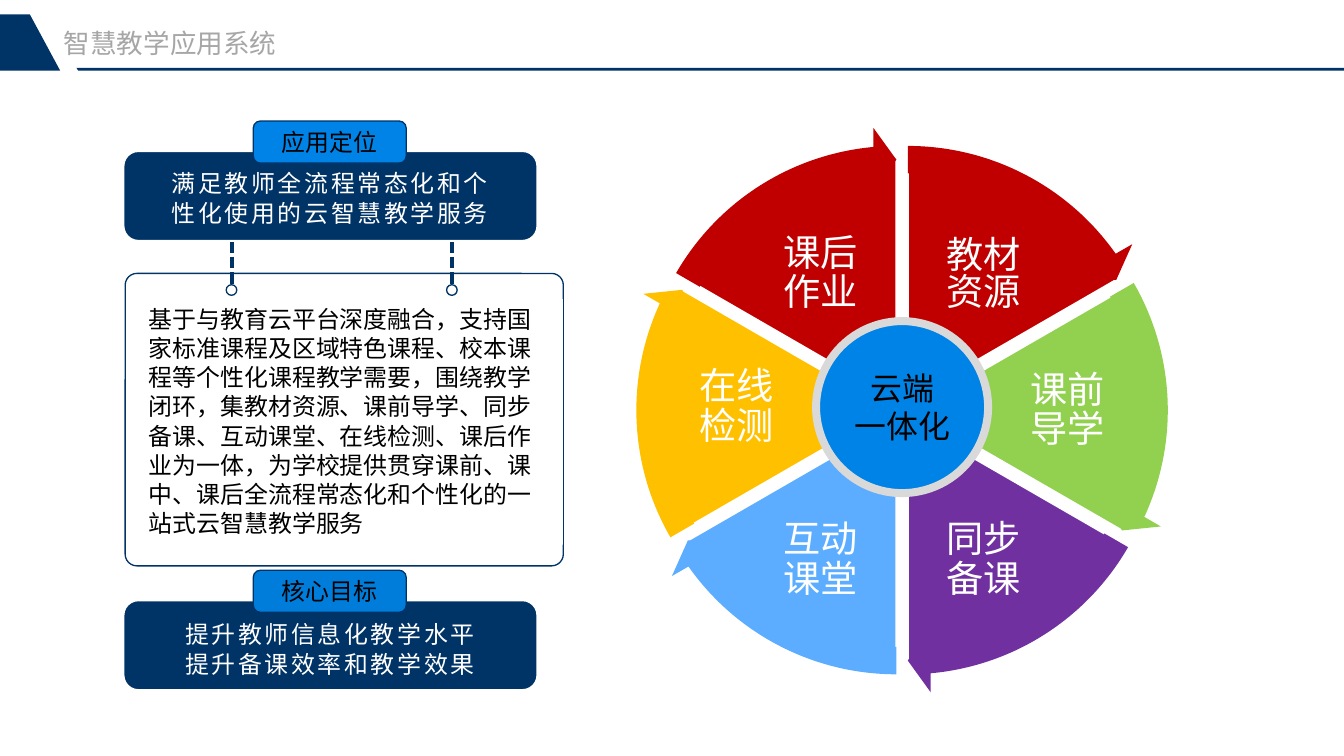
import math

from lxml import etree
from pptx import Presentation
from pptx import util as u
from pptx.dml.color import RGBColor
from pptx.enum import dml, shapes, text
from pptx.oxml import ns

COLORS = {
    "navy": "003366", "white": "FFFFFF", "black": "000000", "title": "A6A6A6",
    "blue": "0083E6", "deep blue": "007DDA", "ring": "D9D9D9", "red": "C00000",
    "green": "92D050", "purple": "7030A0", "sky": "5CADFF", "yellow": "FFC000",
}
CJK_FONT = "Noto Sans CJK SC"
WIDTH, HEIGHT = 1012.32, 569.52
CENTER, TOP, MIDDLE, BOTTOM = (
    text.PP_ALIGN.CENTER, text.MSO_ANCHOR.TOP, text.MSO_ANCHOR.MIDDLE, text.MSO_ANCHOR.BOTTOM)


def style(shape, fill, line=None, width=1):
    shape.shadow.inherit = False
    shape.fill.solid()
    shape.fill.fore_color.rgb = RGBColor.from_string(COLORS[fill])
    if line:
        shape.line.color.rgb = RGBColor.from_string(COLORS[line])
        shape.line.width = u.Pt(width)
    else:
        shape.line.fill.background()
    return shape


def write(shape, lines, size, color, font=CJK_FONT, spacing=0, anchor=MIDDLE,
          margins=(7.2, 3.6), **paragraph_format):
    across, down = (u.Pt(margin) for margin in margins)
    frame_format = {
        "word_wrap": True, "auto_size": text.MSO_AUTO_SIZE.NONE, "vertical_anchor": anchor,
        "margin_left": across, "margin_right": across, "margin_top": down, "margin_bottom": down,
    }
    for name, value in frame_format.items():
        setattr(shape.text_frame, name, value)
    shape.text_frame.text = "\n".join(lines)
    for paragraph in shape.text_frame.paragraphs:
        for name, value in paragraph_format.items():
            setattr(paragraph, name, value)
        for run in paragraph.runs:
            run.font.name, run.font.size = font, u.Pt(size)
            run.font.color.rgb = RGBColor.from_string(COLORS[color])
            properties = run.font._element
            etree.SubElement(properties, ns.qn("a:ea")).set("typeface", CJK_FONT)
            if spacing:
                properties.set("spc", str(spacing * 100))


presentation = Presentation()
presentation.slide_width, presentation.slide_height = u.Pt(WIDTH), u.Pt(HEIGHT)
slide = presentation.slides.add_slide(presentation.slide_layouts[5])
add_shape, add_textbox = slide.shapes.add_shape, slide.shapes.add_textbox
SHAPE = shapes.MSO_SHAPE

# Header band and title
header_outlines = [
    [(57.6, 51.1), (WIDTH, 51.1), (WIDTH, 53.3), (59, 53.3)],
    [(22.5, 10.8), (45.4, 53.3), (0, 53.3), (0, 10.8)],
]
for outline in header_outlines:
    points = [(u.Pt(x), u.Pt(y)) for x, y in outline]
    builder = slide.shapes.build_freeform(*points[0])
    builder.add_line_segments(points[1:])
    style(builder.convert_to_shape(), "navy")

title = slide.shapes.title
title_box = {"left": 48, "top": 20, "width": 241, "height": 24.5}
for name, value in title_box.items():
    setattr(title, name, u.Pt(value))
write(title, ["智慧教学应用系统"], 20, "title", font="Arial", anchor=TOP, margins=(0, 0),
      alignment=text.PP_ALIGN.LEFT, space_before=u.Pt(0))

# Description panel
panel = style(add_shape(SHAPE.ROUNDED_RECTANGLE, u.Pt(94.3), u.Pt(206), u.Pt(330), u.Pt(220.3)),
              "white", "navy")
panel.adjustments[0] = 0.04
description = style(add_shape(SHAPE.RECTANGLE, u.Pt(105), u.Pt(225.4), u.Pt(319), u.Pt(185)), "white")
write(description, [
    "基于与教育云平台深度融合，支持国家标准课程及区域特色课程、校本课程等个性化课程教学需要，"
    "围绕教学闭环，集教材资源、课前导学、同步备课、互动课堂、在线检测、课后作业为一体，"
    "为学校提供贯穿课前、课中、课后全流程常态化和个性化的一站式云智慧教学服务"],
    18, "black", anchor=TOP, alignment=text.PP_ALIGN.LEFT, line_spacing=u.Pt(22))

# Dashed hangers with rings
for x in (174.4, 340.4):
    hanger = slide.shapes.add_connector(
        shapes.MSO_CONNECTOR.STRAIGHT, u.Pt(x), u.Pt(169.2), u.Pt(x), u.Pt(214.5))
    hanger.line.color.rgb = RGBColor.from_string(COLORS["navy"])
    hanger.line.width = u.Pt(3)
    hanger.line.dash_style = dml.MSO_LINE.SQUARE_DOT
    etree.SubElement(hanger._element.spPr, ns.qn("a:effectLst"))
    style(add_shape(SHAPE.OVAL, u.Pt(x - 4), u.Pt(214.5), u.Pt(8), u.Pt(8)), "white", "navy")

# Navy cards with tabs
cards = [
    (113.8, 10, "应用定位", "blue", ["满足教师全流程常态化和个", "性化使用的云智慧教学服务"]),
    (452.2, 11.5, "核心目标", "deep blue", ["提升教师信息化教学水平", "提升备课效率和教学效果"]),
]
for top, text_offset, heading, tab_color, lines in cards:
    style(add_shape(SHAPE.ROUNDED_RECTANGLE, u.Pt(93), u.Pt(top), u.Pt(311.8), u.Pt(67.7)),
          "navy", "white", 1.5)
    card_text = add_textbox(u.Pt(95.8), u.Pt(top + text_offset), u.Pt(305.3), u.Pt(56.2))
    write(card_text, lines, 18, "white", spacing=2, margins=(5.8, 5.8),
          alignment=CENTER, line_spacing=u.Pt(16), space_after=u.Pt(6.3))
    tab = style(add_shape(SHAPE.ROUNDED_RECTANGLE, u.Pt(190.8), u.Pt(top - 22.6), u.Pt(115.2), u.Pt(31.7)),
                tab_color, "navy")
    write(tab, [heading], 18, "black", alignment=CENTER)

# Wheel: six wedges pushed outward from the hub, clockwise from the top
HUB_X, HUB_Y = 679.5, 309
PIE_RADIUS, ARROW_RADIUS, HUB_RADIUS, PUSH = 183.2, 206, 64.8, 8.6
ANGLE_UNIT = 0.6  # adjustment value per degree
wedges = [
    ("red", ["教材", "资源"], 740.5, 165, BOTTOM, 28),
    ("green", ["课前", "导学"], 803.9, 272.2, MIDDLE, 30),
    ("purple", ["同步", "备课"], 740.5, 381, BOTTOM, 30),
    ("sky", ["互动", "课堂"], 618.1, 381, BOTTOM, 30),
    ("yellow", ["在线", "检测"], 554.8, 273.6, TOP, 30),
    ("red", ["课后", "作业"], 618.1, 165, BOTTOM, 30),
]
arrows = []
for index, (color, lines, label_x, label_y, anchor, line_height) in enumerate(wedges):
    start, end = (270 + 60 * index) % 360, (330 + 60 * index) % 360
    direction = math.radians(start + 30)
    x, y = HUB_X + PUSH * math.cos(direction), HUB_Y + PUSH * math.sin(direction)
    pie = style(add_shape(SHAPE.PIE, u.Pt(x - PIE_RADIUS), u.Pt(y - PIE_RADIUS),
                          u.Pt(2 * PIE_RADIUS), u.Pt(2 * PIE_RADIUS)), color, "white", 1.5)
    pie.adjustments[0], pie.adjustments[1] = start * ANGLE_UNIT, end * ANGLE_UNIT
    label = add_textbox(u.Pt(label_x - 48), u.Pt(label_y), u.Pt(96), u.Pt(74))
    write(label, lines, 28, "white", anchor=anchor, margins=(2.9, 2.9),
          alignment=CENTER, line_spacing=u.Pt(line_height))
    arrows.append((color, x, y, start * ANGLE_UNIT, end * ANGLE_UNIT))

# Rim arrows over the wedges
for color, x, y, start, end in arrows:
    arrow = style(add_shape(SHAPE.CIRCULAR_ARROW, u.Pt(x - ARROW_RADIUS), u.Pt(y - ARROW_RADIUS),
                            u.Pt(2 * ARROW_RADIUS), u.Pt(2 * ARROW_RADIUS)), color)
    for position, value in enumerate((0.05, 3.28, end - 3.28, start, 0.06)):
        arrow.adjustments[position] = value

# Hub
hub = style(add_shape(SHAPE.OVAL, u.Pt(HUB_X - HUB_RADIUS), u.Pt(306.7 - HUB_RADIUS),
                      u.Pt(2 * HUB_RADIUS), u.Pt(2 * HUB_RADIUS)), "blue", "ring", 6)
write(hub, ["云端", "一体化"], 24, "black", alignment=CENTER)

presentation.save("out.pptx")
